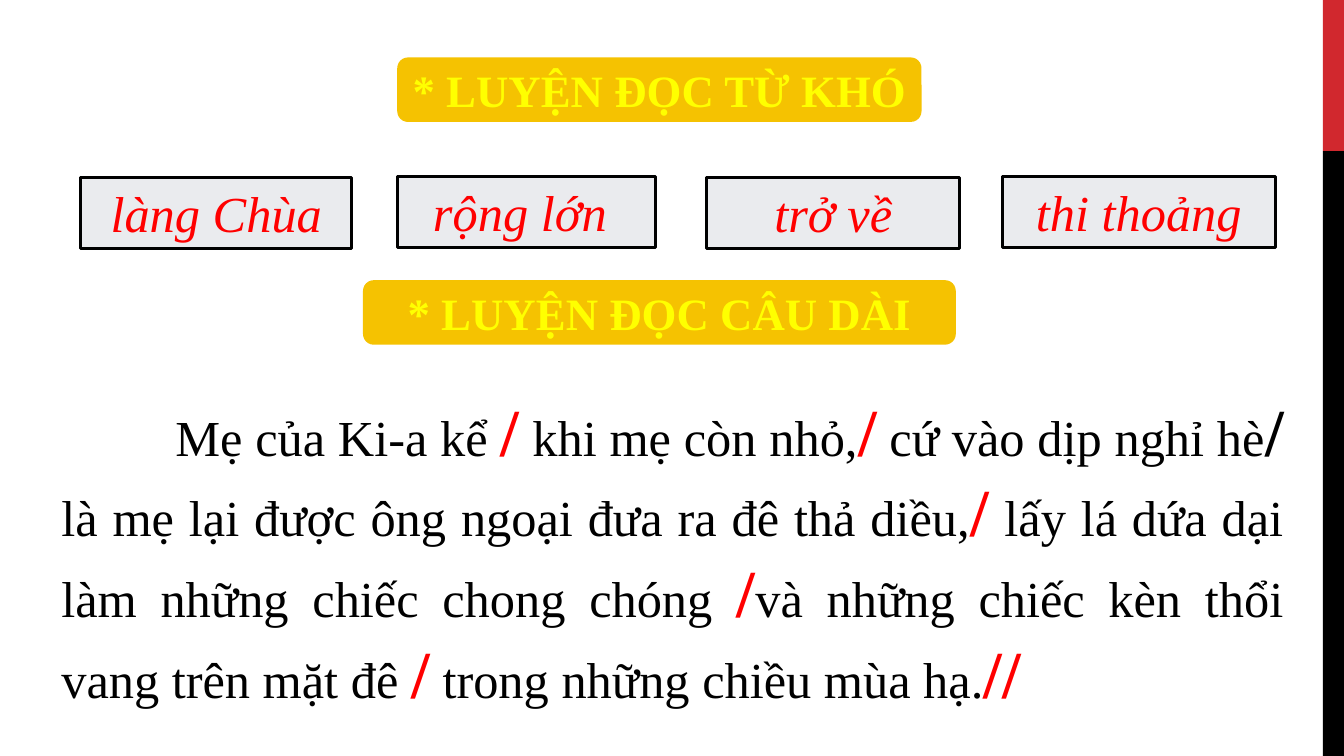
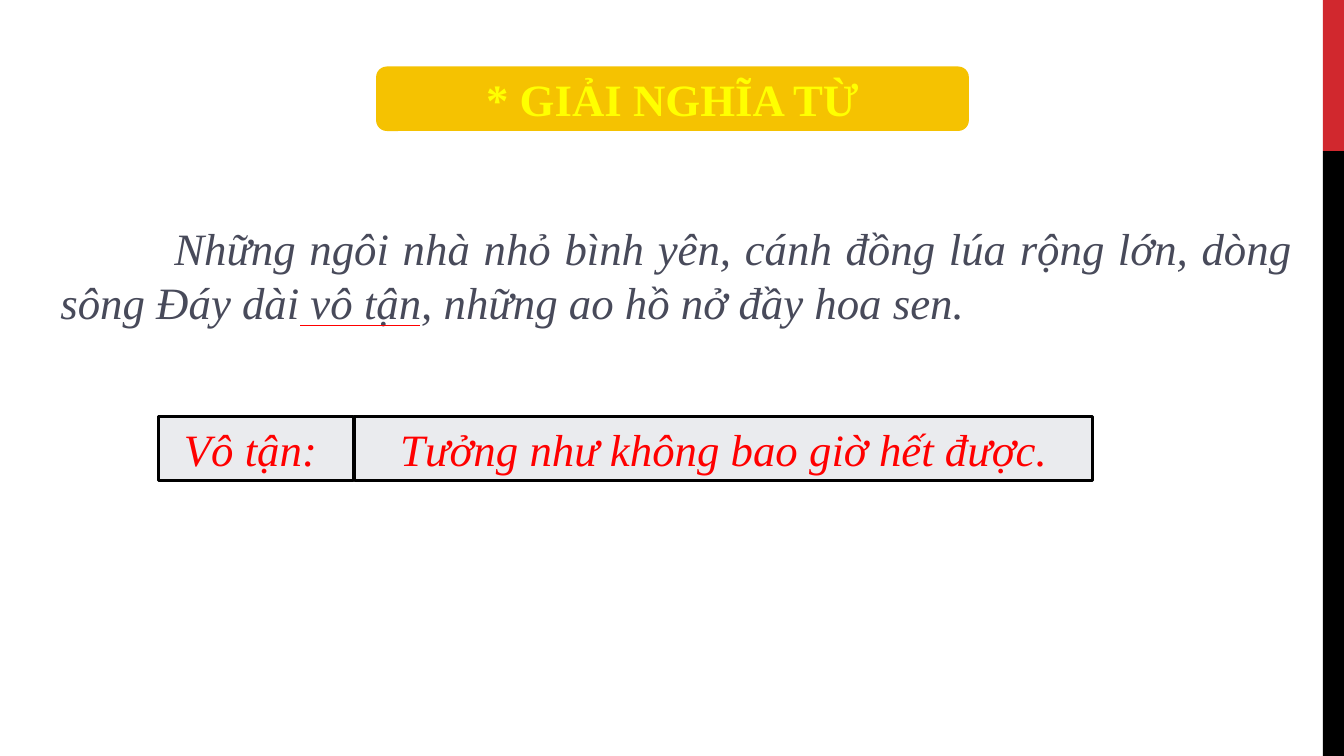
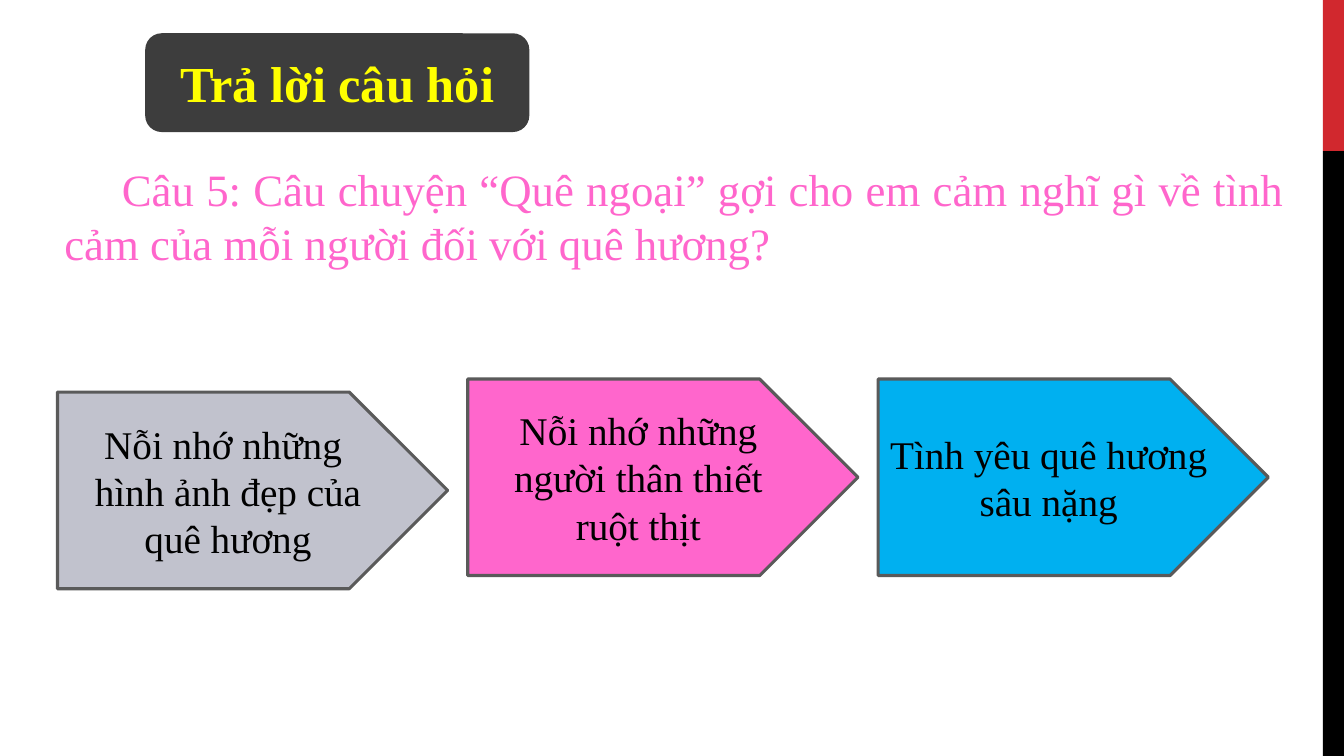
from lxml import etree
from pptx import Presentation
from pptx.dml.color import RGBColor
from pptx.enum.shapes import MSO_CONNECTOR, MSO_SHAPE
from pptx.enum.text import MSO_ANCHOR, PP_ALIGN
from pptx.oxml.ns import qn
from pptx.util import Inches, Pt

RECT, ROUND, PLATE = MSO_SHAPE.RECTANGLE, MSO_SHAPE.ROUNDED_RECTANGLE, MSO_SHAPE.PENTAGON
TOP, MIDDLE = MSO_ANCHOR.TOP, MSO_ANCHOR.MIDDLE
CENTER, JUSTIFY = PP_ALIGN.CENTER, PP_ALIGN.JUSTIFY
STRAIGHT = MSO_CONNECTOR.STRAIGHT

FONT = "Times New Roman"
WIDE, HIGH = 13.33, 7.5
COLORS = {
    "white": "FFFFFF", "black": "000000", "band": "D1282E", "gold": "F5C201",
    "yellow": "FFFF00", "red": "FF0000", "pale": "EAEBEE", "slate": "484A5A",
    "dark": "3D3D3D", "pink": "FF66CC", "gray": "C1C2CD", "edge": "5A5A5A",
    "blue": "00B0F0",
}

# text, left, top, width
HEADS = [
    ("* LUYỆN ĐỌC TỪ KHÓ", 3.94, 0.57, 5.2),
    ("* LUYỆN ĐỌC CÂU DÀI", 3.6, 2.78, 5.88),
]
MEANING = ("* GIẢI NGHĨA TỪ", 3.73, 0.66, 5.88)
WORDS = [
    ("làng Chùa", 0.8, 1.76, 2.69),
    ("rộng lớn ", 3.94, 1.75, 2.56),
    ("trở về", 7.01, 1.76, 2.51),
    ("thi thoảng", 9.94, 1.75, 2.71),
]
TERMS = [
    ("Vô tận: ", 1.57, 4.13, 1.94),
    ("Tưởng như không bao giờ hết được.", 3.52, 4.13, 7.32),
]
# phrase, the pause mark after it, colour of the mark
PHRASES = [
    ("Mẹ của Ki-a kể ", "/", "red"),
    (" khi mẹ còn nhỏ,", "/", "red"),
    (" cứ vào dịp nghỉ hè", "/", "black"),
    (" là mẹ lại được ông ngoại đưa ra đê thả diều,", "/", "red"),
    (" lấy lá dứa dại làm những chiếc chong chóng ", "/", "red"),
    ("và những chiếc kèn thổi vang trên mặt đê ", "/", "red"),
    (" trong những chiều mùa hạ.", "//", "red"),
]
EXAMPLE = ("Những ngôi nhà nhỏ bình yên, cánh đồng lúa rộng lớn, dòng sông Đáy "
           "dài vô tận, những ao hồ nở đầy hoa sen.")
QUESTION = ("Câu 5: Câu chuyện “Quê ngoại” gợi cho em cảm nghĩ gì về tình cảm "
            "của mỗi người đối với quê hương?")
# lines, fill, top
ANSWERS = [
    (["Nỗi nhớ những ", "hình ảnh đẹp của quê hương"], "gray", 3.89),
    (["Nỗi nhớ những người thân thiết ruột thịt"], "pink", 3.76),
    (["Tình yêu quê hương sâu nặng"], "blue", 3.76),
]


def rgb(name):
    return RGBColor.from_string(COLORS[name])


def style(font, size, color, bold=False, italic=False):
    font.name, font.size = FONT, Pt(size)
    font.bold, font.italic = bold, italic
    font.color.rgb = rgb(color)


def box(slide, kind, area, fill, line=None):
    shape = slide.shapes.add_shape(kind, *map(Inches, area))
    shape.shadow.inherit = False
    shape.fill.solid()
    shape.fill.fore_color.rgb = rgb(fill)
    if line:
        shape.line.color.rgb = rgb(line)
        shape.line.width = Pt(2.25)
    else:
        shape.line.fill.background()
    return shape


def label(shape, lines, size, color, anchor=MIDDLE, **look):
    frame = shape.text_frame
    frame.word_wrap = True
    frame.vertical_anchor = anchor
    frame.text = "\n".join(lines)
    for para in frame.paragraphs:
        para.alignment = CENTER
        style(para.font, size, color, **look)


def head(slide, text, left, top, width):
    shape = box(slide, ROUND, (left, top, width, 0.64), "gold")
    label(shape, [text], 32, "yellow", bold=True)


def card(slide, size, high, text, left, top, width):
    shape = box(slide, RECT, (left, top, width, high), "pale", "black")
    label(shape, [text], size, "red", TOP, italic=True)


def passage(slide, area, indent):
    """Add a justified paragraph whose first line is indented."""
    frame = slide.shapes.add_textbox(*map(Inches, area)).text_frame
    frame.word_wrap = True
    para = frame.paragraphs[0]
    para.alignment = JUSTIFY
    para._p.get_or_add_pPr().set("indent", str(Inches(indent)))
    return para


def start(deck):
    """Add a blank slide with the bands on its right edge."""
    slide = deck.slides.add_slide(deck.slide_layouts[6])
    slide.background.fill.solid()
    slide.background.fill.fore_color.rgb = rgb("white")
    left, cut = 13.12, HIGH / 5
    box(slide, RECT, (left, 0, WIDE - left, cut), "band")
    box(slide, RECT, (left, cut, WIDE - left, HIGH - cut), "black")
    return slide


def reading(deck):
    slide = start(deck)
    for item in HEADS:
        head(slide, *item)
    for item in WORDS:
        card(slide, 36, 0.71, *item)
    para = passage(slide, (0.51, 3.81, 12.32, 3.6), 1.13)
    for phrase, mark, color in PHRASES:
        for text, size, tint, bold in ((phrase, 36, "black", False), (mark, 48, color, True)):
            run = para.add_run()
            run.text = text
            style(run.font, size, tint, bold)


def meaning(deck):
    slide = start(deck)
    head(slide, *MEANING)
    for item in TERMS:
        card(slide, 32, 0.64, *item)
    para = passage(slide, (0.5, 2.14, 12.42, 1.18), 1.13)
    para.text = EXAMPLE
    style(para.font, 32, "slate", italic=True)
    rule = slide.shapes.add_connector(STRAIGHT, *map(Inches, (2.98, 3.23, 4.17, 3.23)))
    rule.line.color.rgb = rgb("red")
    rule.line.width = Pt(1.25)
    etree.SubElement(rule._element.spPr, qn("a:effectLst"))


def answers(deck):
    slide = start(deck)
    title = box(slide, ROUND, (1.44, 0.33, 3.81, 0.98), "dark")
    label(title, ["Trả lời câu hỏi"], 36, "yellow", bold=True)
    para = passage(slide, (0.54, 1.56, 12.3, 1.18), 0.57)
    para.text = QUESTION
    style(para.font, 32, "pink")
    left, step = 0.57, 4.07
    for i, (lines, fill, top) in enumerate(ANSWERS):
        plate = box(slide, PLATE, (left + i * step, top, 3.87, 1.95), fill, "edge")
        label(plate, lines, 28, "black")


def main():
    deck = Presentation()
    deck.slide_width, deck.slide_height = Inches(WIDE), Inches(HIGH)
    for build in (reading, meaning, answers):
        build(deck)
    deck.save("out.pptx")


if __name__ == "__main__":
    main()
